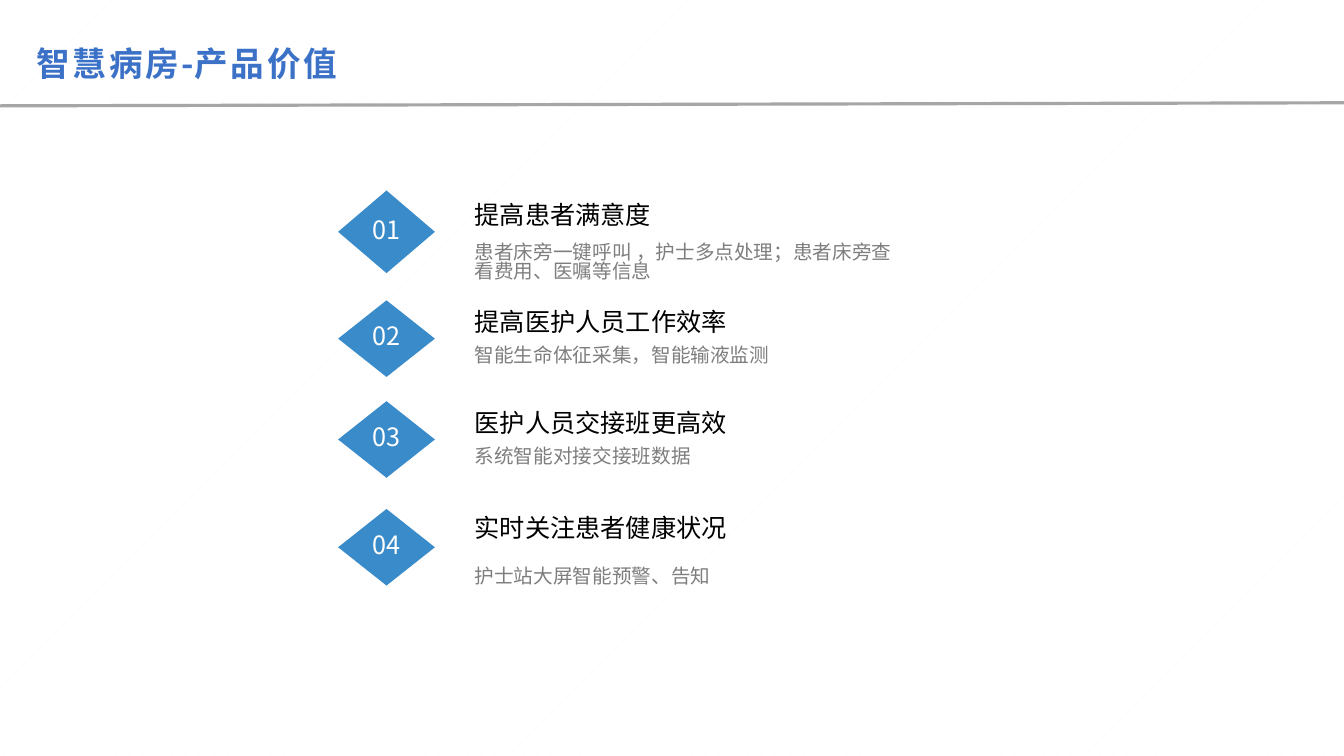
from dataclasses import dataclass

from lxml.etree import SubElement
from pptx import Presentation
from pptx.dml.color import RGBColor
from pptx.enum.dml import MSO_PATTERN
from pptx.enum.shapes import MSO_CONNECTOR, MSO_SHAPE
from pptx.enum.text import MSO_ANCHOR, MSO_AUTO_SIZE, PP_ALIGN
from pptx.oxml.ns import qn
from pptx.slide import Slide
from pptx.text.text import TextFrame, _Paragraph as Paragraph
from pptx.util import Inches, Length, Pt


@dataclass(frozen=True)
class Theme:
    latin: str = "Arial"
    chinese: str = "Noto Sans CJK SC"
    title: str = "3B71C7"
    rule: str = "A6A6A6"
    diamond: str = "3A8BCA"
    number: str = "FFFFFF"
    heading: str = "000000"
    detail: str = "7E7E7E"
    paper: str = "FFFFFF"
    paper_dots: str = "FCFBFB"
    title_size: float = 24
    heading_size: float = 18
    detail_size: float = 14
    rule_width: float = 2.28
    leading: float = 0.8


@dataclass(frozen=True)
class Benefit:
    heading: str
    detail: str
    diamond_row: float
    diamond_rows: float
    text_row: float
    gap: float  # points between heading and detail


THEME = Theme()
WIDTH, HEIGHT = Inches(13.333), Inches(7.5)
# The grid has 100 columns and 100 rows
DIAMOND_COL, DIAMOND_COLS = 25.16, 7.2
TEXT_COL, TEXT_COLS, TEXT_ROWS = 35.32, 31.35, 10

BENEFITS = [
    Benefit("提高患者满意度",
            "患者床旁一键呼叫 ，护士多点处理；患者床旁查 看费用、医嘱等信息",
            25.2, 10.93, 27.07, 11.1),
    Benefit("提高医护人员工作效率", "智能生命体征采集，智能输液监测",
            39.73, 10.13, 41.33, 7.7),
    Benefit("医护人员交接班更高效", "系统智能对接交接班数据",
            53.07, 10.13, 54.67, 7.7),
    Benefit("实时关注患者健康状况", "护士站大屏智能预警、告知",
            67.33, 10.13, 68.53, 18.7),
]


def cols(count: float) -> Length:
    return Length(round(WIDTH * count / 100))


def rows(count: float) -> Length:
    return Length(round(HEIGHT * count / 100))


def rgb(value: str) -> RGBColor:
    return RGBColor.from_string(value)


def add_run(paragraph: Paragraph, words: str, size: float, color: str,
            latin: str = THEME.chinese, bold: bool = False,
            tracking: float = 0) -> None:
    run = paragraph.add_run()
    run.text = words
    font = run.font
    font.size, font.bold, font.name = Pt(size), bold, latin
    font.color.rgb = rgb(color)
    properties = run._r.get_or_add_rPr()
    properties.set("spc", str(round(tracking * 100)))
    SubElement(properties, qn("a:ea"), typeface=THEME.chinese)


def prepare(frame: TextFrame, anchor: MSO_ANCHOR, wrap: bool = True) -> None:
    frame.margin_left = frame.margin_right = 0
    frame.margin_top = frame.margin_bottom = 0
    frame.auto_size = MSO_AUTO_SIZE.NONE
    frame.vertical_anchor = anchor
    frame.word_wrap = wrap


def arrange(paragraph: Paragraph, align: PP_ALIGN = PP_ALIGN.LEFT,
            before: float = 0) -> None:
    paragraph.alignment = align
    paragraph.line_spacing = THEME.leading
    paragraph.space_before = Pt(before)


def draw_header(slide: Slide) -> None:
    title = slide.shapes.title
    title.left, title.top = cols(2.7), rows(6)
    title.width, title.height = cols(25.12), rows(5.73)
    prepare(title.text_frame, MSO_ANCHOR.MIDDLE)
    line = title.text_frame.paragraphs[0]
    arrange(line)
    for words, latin, tracking in (("智慧病房", THEME.latin, 2),
                                   ("-", THEME.chinese, -0.1),
                                   ("产品价值", THEME.latin, 2)):
        add_run(line, words, THEME.title_size, THEME.title, latin, True, tracking)

    # Slightly rising rule under the title
    rule = slide.shapes.add_connector(
        MSO_CONNECTOR.STRAIGHT, 0, rows(14), WIDTH, rows(13.6))
    rule.line.color.rgb = rgb(THEME.rule)
    rule.line.width = Pt(THEME.rule_width)
    SubElement(rule._element.spPr, qn("a:effectLst"))


def draw_benefit(slide: Slide, number: int, benefit: Benefit) -> None:
    # Numbered diamond
    diamond = slide.shapes.add_shape(
        MSO_SHAPE.DIAMOND, cols(DIAMOND_COL), rows(benefit.diamond_row),
        cols(DIAMOND_COLS), rows(benefit.diamond_rows))
    diamond.shadow.inherit = False
    diamond.fill.solid()
    diamond.fill.fore_color.rgb = rgb(THEME.diamond)
    diamond.line.fill.background()
    prepare(diamond.text_frame, MSO_ANCHOR.MIDDLE, wrap=False)
    label = diamond.text_frame.paragraphs[0]
    arrange(label, PP_ALIGN.CENTER)
    add_run(label, f"{number:02}", THEME.heading_size, THEME.number, tracking=-0.1)

    # Heading with its detail
    frame = slide.shapes.add_textbox(
        cols(TEXT_COL), rows(benefit.text_row),
        cols(TEXT_COLS), rows(TEXT_ROWS)).text_frame
    prepare(frame, MSO_ANCHOR.TOP)
    heading, detail = frame.paragraphs[0], frame.add_paragraph()
    arrange(heading)
    add_run(heading, benefit.heading, THEME.heading_size, THEME.heading)
    arrange(detail, before=benefit.gap)
    add_run(detail, benefit.detail, THEME.detail_size, THEME.detail)


def main() -> None:
    deck = Presentation()
    deck.slide_width, deck.slide_height = WIDTH, HEIGHT
    slide = deck.slides.add_slide(deck.slide_layouts.get_by_name("Title Only"))

    # Faintly dotted paper
    paper = slide.background.fill
    paper.patterned()
    paper.pattern = MSO_PATTERN.PERCENT_5
    paper.fore_color.rgb = rgb(THEME.paper_dots)
    paper.back_color.rgb = rgb(THEME.paper)

    draw_header(slide)
    for number, benefit in enumerate(BENEFITS, start=1):
        draw_benefit(slide, number, benefit)
    deck.save("out.pptx")


if __name__ == "__main__":
    main()
